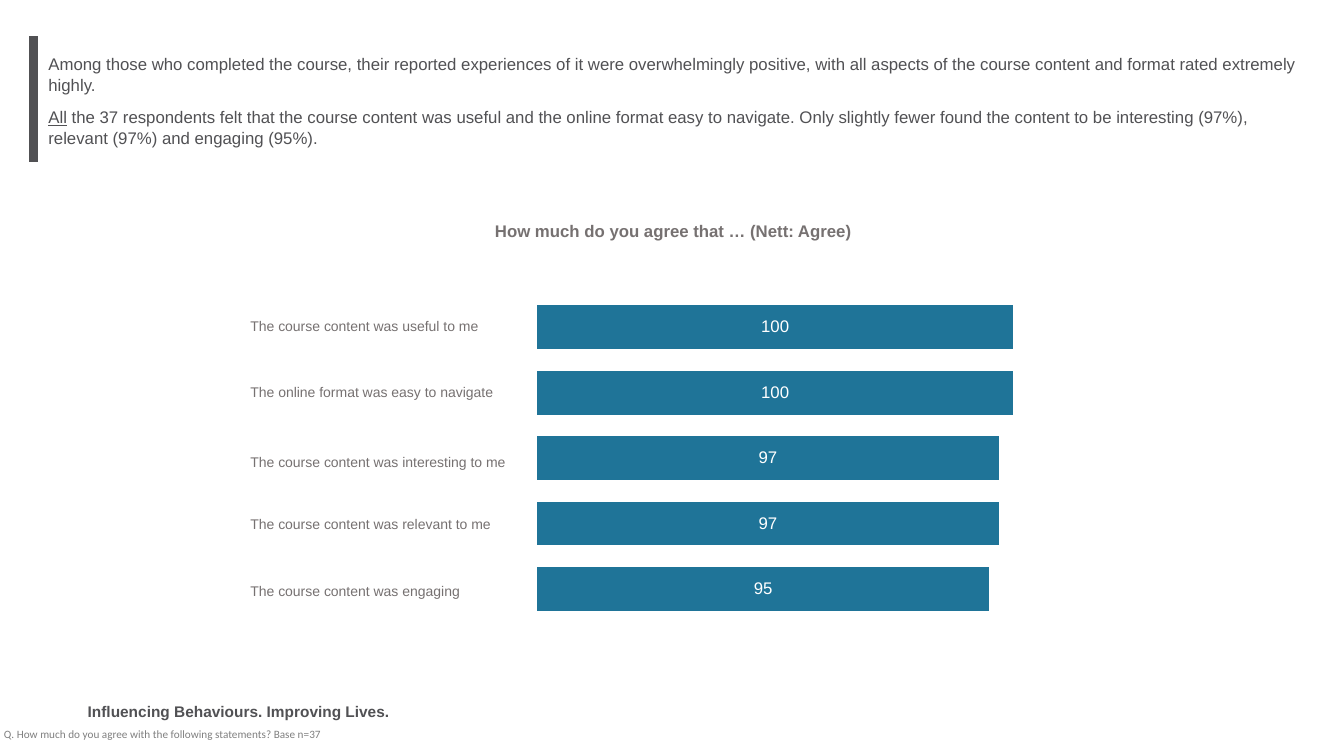
from lxml import etree
from pptx import Presentation
from pptx import util as u
from pptx.chart.data import CategoryChartData
from pptx.dml.color import RGBColor
from pptx.enum import chart as charts, shapes, text
from pptx.oxml import parse_xml
from pptx.oxml.ns import nsdecls, qn

COLORS = {
    "ink": "515154",
    "label": "767171",
    "note": "808080",
    "bar": "1F7498",
    "value": "FFFFFF",
}
RATINGS = [
    ("The course content was useful to me", 100, 0.74),
    ("The online format was easy to navigate", 100, 2.39),
    ("The course content was interesting to me", 97, 4.17),
    ("The course content was relevant to me", 97, 5.72),
    ("The course content was engaging", 95, 7.42),
]
FINDINGS = [
    [("Among those who completed the course, their reported experiences of it "
      "were overwhelmingly positive, with all aspects of the course content "
      "and format rated extremely highly.", False)],
    [("All", True),
     (" the 37 respondents felt that the course content was useful and the "
      "online format easy to navigate. Only slightly fewer found the content "
      "to be interesting (97%), relevant (97%) and engaging (95%).", False)],
]


def rgb(name):
    return RGBColor.from_string(COLORS[name])


def style(font, size, color, bold=False, name="Arial"):
    font.name = name
    font.size = u.Pt(size)
    font.bold = bold
    font.color.rgb = rgb(color)


def add_frame(slide, left, top, width, height, anchor=text.MSO_ANCHOR.MIDDLE):
    box = slide.shapes.add_textbox(u.Cm(left), u.Cm(top), u.Cm(width), u.Cm(height))
    frame = box.text_frame
    frame.word_wrap = True
    frame.vertical_anchor = anchor
    return frame


def set_insets(frame, inset):
    frame.margin_left = frame.margin_right = u.Cm(inset)
    frame.margin_top = frame.margin_bottom = u.Cm(inset)


def add_findings(slide, left, top, width, height):
    accent_x = u.Cm(left)
    accent = slide.shapes.add_connector(
        shapes.MSO_CONNECTOR.STRAIGHT,
        accent_x, u.Cm(top + 0.3), accent_x, u.Cm(top + 3.48))
    accent.line.color.rgb = rgb("ink")
    accent.line.width = u.Pt(6)
    etree.SubElement(accent.element.spPr, qn("a:effectLst"))

    frame = add_frame(slide, left + 0.13, top, width - 0.13, height)
    for index, runs in enumerate(FINDINGS):
        finding = frame.paragraphs[0] if index == 0 else frame.add_paragraph()
        finding.space_after = u.Pt(9)
        style(finding.font, 12, "ink")
        for words, underlined in runs:
            run = finding.add_run()
            run.text = words
            if underlined:
                run.font.underline = True


def add_heading(slide, left, top, width, height):
    heading = slide.shapes.title
    heading.left, heading.top = u.Cm(left), u.Cm(top)
    heading.width, heading.height = u.Cm(width), u.Cm(height)
    frame = heading.text_frame
    frame.text = "How much do you agree that … (Nett: Agree)"
    frame.auto_size = text.MSO_AUTO_SIZE.NONE
    frame.vertical_anchor = text.MSO_ANCHOR.MIDDLE
    question = frame.paragraphs[0]
    question.alignment = text.PP_ALIGN.CENTER
    style(question.font, 12, "label", bold=True)


def set_plot_area(chart, x, y, width, height):
    plot_area = chart.element.find(".//" + qn("c:plotArea"))
    for layout in plot_area.findall(qn("c:layout")):
        plot_area.remove(layout)
    plot_area.insert(0, parse_xml(
        f'<c:layout {nsdecls("c")}><c:manualLayout>'
        '<c:layoutTarget val="inner"/>'
        '<c:xMode val="edge"/><c:yMode val="edge"/>'
        f'<c:x val="{x}"/><c:y val="{y}"/>'
        f'<c:w val="{width}"/><c:h val="{height}"/>'
        '</c:manualLayout></c:layout>'))


def add_ratings(slide, left, top, width, height):
    data = CategoryChartData()
    data.categories = [str(number) for number in range(1, len(RATINGS) + 1)]
    data.add_series("Series 1", [value for _, value, _ in RATINGS])
    chart = slide.shapes.add_chart(
        charts.XL_CHART_TYPE.BAR_STACKED,
        u.Cm(left), u.Cm(top), u.Cm(width), u.Cm(height), data).chart
    chart.has_legend = False
    chart.has_title = False
    style(chart.font, 10, "ink")
    set_plot_area(chart, 0.002, 0.098, 0.946, 0.79)

    chart.category_axis.visible = False
    chart.category_axis.reverse_order = True
    agreement = chart.value_axis
    agreement.visible = False
    agreement.has_major_gridlines = False
    agreement.minimum_scale, agreement.maximum_scale = -100, 100

    plot = chart.plots[0]
    plot.vary_by_categories = False
    plot.gap_width = 50
    plot.overlap = 100
    bars = plot.series[0]
    bars.format.fill.solid()
    bars.format.fill.fore_color.rgb = rgb("bar")
    values = bars.data_labels
    values.show_value = True
    values.position = charts.XL_LABEL_POSITION.CENTER
    style(values.font, 12, "value")

    for statement, _, offset in RATINGS:
        frame = add_frame(slide, left + 4.56, top + 0.7 + offset, 9.27, 0.76)
        label = frame.paragraphs[0]
        label.text = statement
        style(label.font, 10, "label")


def add_footer(slide, left, top, width, height):
    frame = add_frame(slide, left + 2.11, top, 10.03, 0.76)
    set_insets(frame, 0.1)
    slogan = frame.paragraphs[0]
    slogan.text = "Influencing Behaviours. Improving Lives."
    slogan.line_spacing = 1.2
    style(slogan.font, 11, "ink", bold=True)

    frame = add_frame(slide, left, top + 0.76, width, height - 0.76,
                      text.MSO_ANCHOR.TOP)
    set_insets(frame, 0.1)
    base = frame.paragraphs[0]
    base.text = "Q. How much do you agree with the following statements? Base n=37"
    base.line_spacing = u.Pt(9)
    style(base.font, 8, "note", name="Calibri")


def main():
    deck = Presentation()
    deck.slide_width, deck.slide_height = u.Cm(33.87), u.Cm(19.05)
    slide = deck.slides.add_slide(deck.slide_layouts[5])
    add_ratings(slide, 1.5, 6.4, 25.35, 10.44)
    add_heading(slide, 7.85, 5.23, 18.24, 1.17)
    add_findings(slide, 0.84, 0.61, 32.19, 3.86)
    add_footer(slide, 0, 17.5, 30.33, 1.55)
    deck.save("out.pptx")


if __name__ == "__main__":
    main()
